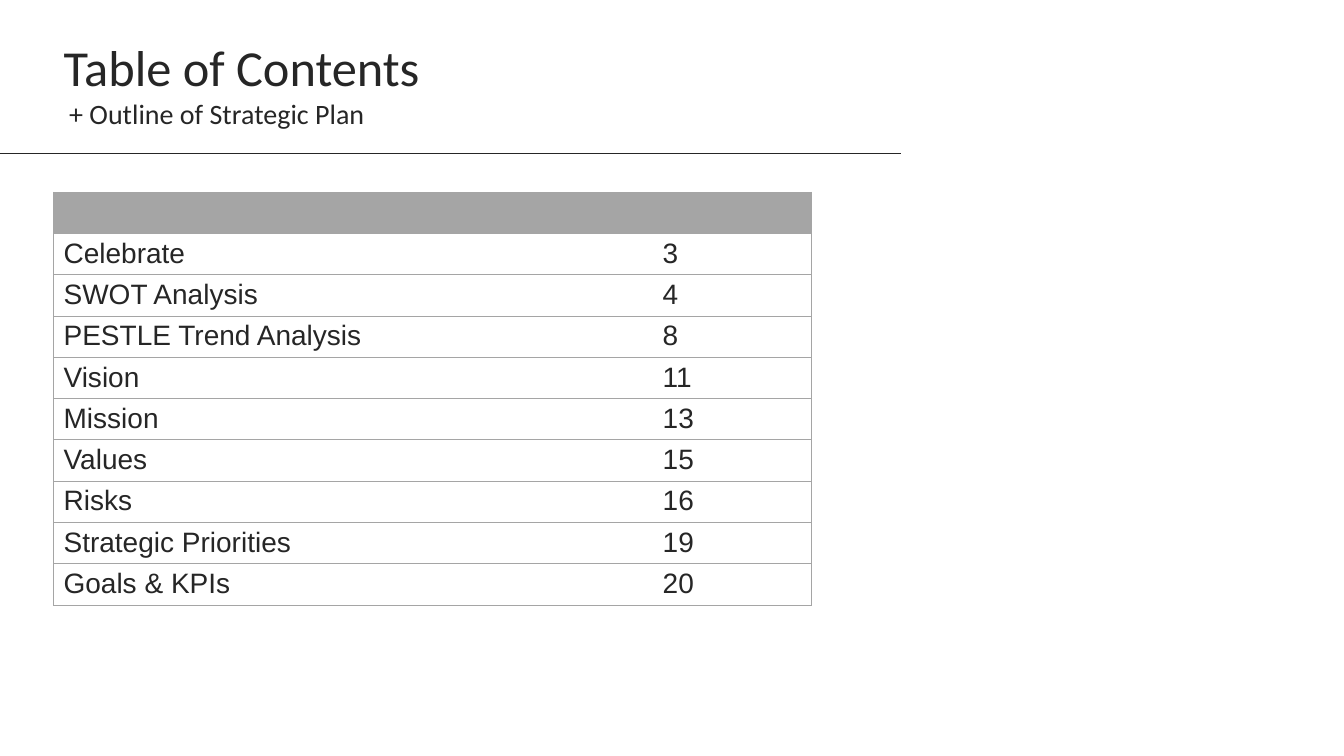
import dataclasses

import lxml.etree
import pptx
import pptx.dml.color
import pptx.enum.text
import pptx.oxml
import pptx.oxml.ns
import pptx.presentation
import pptx.shapes.autoshape
import pptx.slide
import pptx.table
import pptx.text.text
import pptx.util

COLORS = {"ink": "262626", "grid": "A5A5A5"}
LINE_WIDTH = 0.75
PLAIN_TABLE_STYLE = "{2D5ABB26-0587-4C30-8999-92F81FD0307C}"

LEFT = 38.2
TABLE_TOP = 137.3
ROW_HEIGHT = 29.5
COLUMN_WIDTHS = (428, 113.8)


@dataclasses.dataclass(frozen=True)
class Entry:
    name: str
    page: str


@dataclasses.dataclass(frozen=True)
class Heading:
    text: str
    size: float
    indent: float


HEADINGS = (
    Heading("Table of Contents", 36, 0),
    Heading("+ Outline of Strategic Plan", 20, 4),
)

HEADER = Entry("", "")
ENTRIES = (
    Entry("Celebrate", "3"),
    Entry("SWOT Analysis", "4"),
    Entry("PESTLE Trend Analysis", "8"),
    Entry("Vision", "11"),
    Entry("Mission", "13"),
    Entry("Values", "15"),
    Entry("Risks", "16"),
    Entry("Strategic Priorities", "19"),
    Entry("Goals & KPIs", "20"),
)


def rgb(name: str) -> pptx.dml.color.RGBColor:
    return pptx.dml.color.RGBColor.from_string(COLORS[name])


def apply_format(target: object, values: dict) -> None:
    for name, value in values.items():
        setattr(target, name, value)


def format_font(font: pptx.text.text.Font, name: str, size: float) -> None:
    apply_format(font, {"name": name, "size": pptx.util.Pt(size)})
    font.color.rgb = rgb("ink")


def add_border(cell: pptx.table._Cell, side: str) -> None:
    namespace = pptx.oxml.ns.nsdecls("a")
    width = int(pptx.util.Pt(LINE_WIDTH))
    border = pptx.oxml.parse_xml(
        f'<a:ln{side} {namespace} w="{width}"><a:solidFill>'
        f'<a:srgbClr val="{COLORS["grid"]}"/></a:solidFill></a:ln{side}>'
    )
    cell._tc.get_or_add_tcPr().append(border)


def draw_headings(slide: pptx.slide.Slide) -> None:
    title = slide.shapes.title
    apply_format(title, {
        "left": pptx.util.Pt(LEFT),
        "top": pptx.util.Pt(22.3),
        "width": pptx.util.Pt(898),
        "height": pptx.util.Pt(140.4),
    })
    frame = title.text_frame
    apply_format(frame, {
        "word_wrap": True,
        "auto_size": pptx.enum.text.MSO_AUTO_SIZE.NONE,
        "vertical_anchor": pptx.enum.text.MSO_ANCHOR.TOP,
    })
    frame.text = "\n".join(heading.text for heading in HEADINGS)
    for paragraph, heading in zip(frame.paragraphs, HEADINGS):
        apply_format(paragraph, {
            "alignment": pptx.enum.text.PP_ALIGN.LEFT,
            "line_spacing": 1.0,
            "space_before": pptx.util.Pt(0),
        })
        indent = int(pptx.util.Pt(heading.indent))
        paragraph._p.get_or_add_pPr().set("marL", str(indent))
        format_font(paragraph.runs[0].font, "Calibri", heading.size)


def draw_rule(slide: pptx.slide.Slide) -> None:
    height = pptx.util.Pt(109.5)
    rule = slide.shapes.add_connector(
        pptx.enum.shapes.MSO_CONNECTOR.STRAIGHT,
        pptx.util.Pt(0), height, pptx.util.Pt(643.7), height,
    )
    rule.line.color.rgb = rgb("ink")
    rule.line.width = pptx.util.Pt(LINE_WIDTH)
    lxml.etree.SubElement(
        rule._element.spPr, pptx.oxml.ns.qn("a:effectLst"))


def format_cell(cell: pptx.table._Cell, row: int, column: int) -> None:
    # Lines frame the table and every second row
    sides = {
        "L": column == 0,
        "R": column == len(COLUMN_WIDTHS) - 1,
        "T": row == 0 or row % 2 == 1,
        "B": row % 2 == 1,
    }
    for side, visible in sides.items():
        if visible:
            add_border(cell, side)
    if row == 0:
        cell.fill.solid()
        cell.fill.fore_color.rgb = rgb("grid")
    else:
        cell.fill.background()
    apply_format(cell, {
        "margin_top": pptx.util.Pt(3.2),
        "margin_bottom": pptx.util.Pt(3.2),
    })
    format_font(cell.text_frame.paragraphs[0].font, "Arial", 20)
    for run in cell.text_frame.paragraphs[0].runs:
        format_font(run.font, "Arial", 20)


def draw_contents(slide: pptx.slide.Slide) -> None:
    rows = (HEADER, *ENTRIES)
    table = slide.shapes.add_table(
        len(rows), len(COLUMN_WIDTHS),
        pptx.util.Pt(LEFT), pptx.util.Pt(TABLE_TOP),
        pptx.util.Pt(sum(COLUMN_WIDTHS)),
        pptx.util.Pt(ROW_HEIGHT * len(rows)),
    ).table
    apply_format(table, {"first_row": False, "horz_banding": False})
    style = table._tbl.tblPr.find(pptx.oxml.ns.qn("a:tableStyleId"))
    style.text = PLAIN_TABLE_STYLE
    for column, width in zip(table.columns, COLUMN_WIDTHS):
        column.width = pptx.util.Pt(width)
    for row, entry in enumerate(rows):
        table.rows[row].height = pptx.util.Pt(ROW_HEIGHT)
        for column, text in enumerate((entry.name, entry.page)):
            cell = table.cell(row, column)
            if text:
                cell.text = text
            format_cell(cell, row, column)


def main() -> None:
    presentation = pptx.Presentation()
    presentation.slide_width = pptx.util.Pt(960)
    presentation.slide_height = pptx.util.Pt(540)
    title_only = presentation.slide_layouts[5]
    slide = presentation.slides.add_slide(title_only)

    # Table of sections and page numbers
    draw_contents(slide)
    # Line under the heading
    draw_rule(slide)
    # Title and subtitle
    draw_headings(slide)

    presentation.save("out.pptx")


if __name__ == "__main__":
    main()
